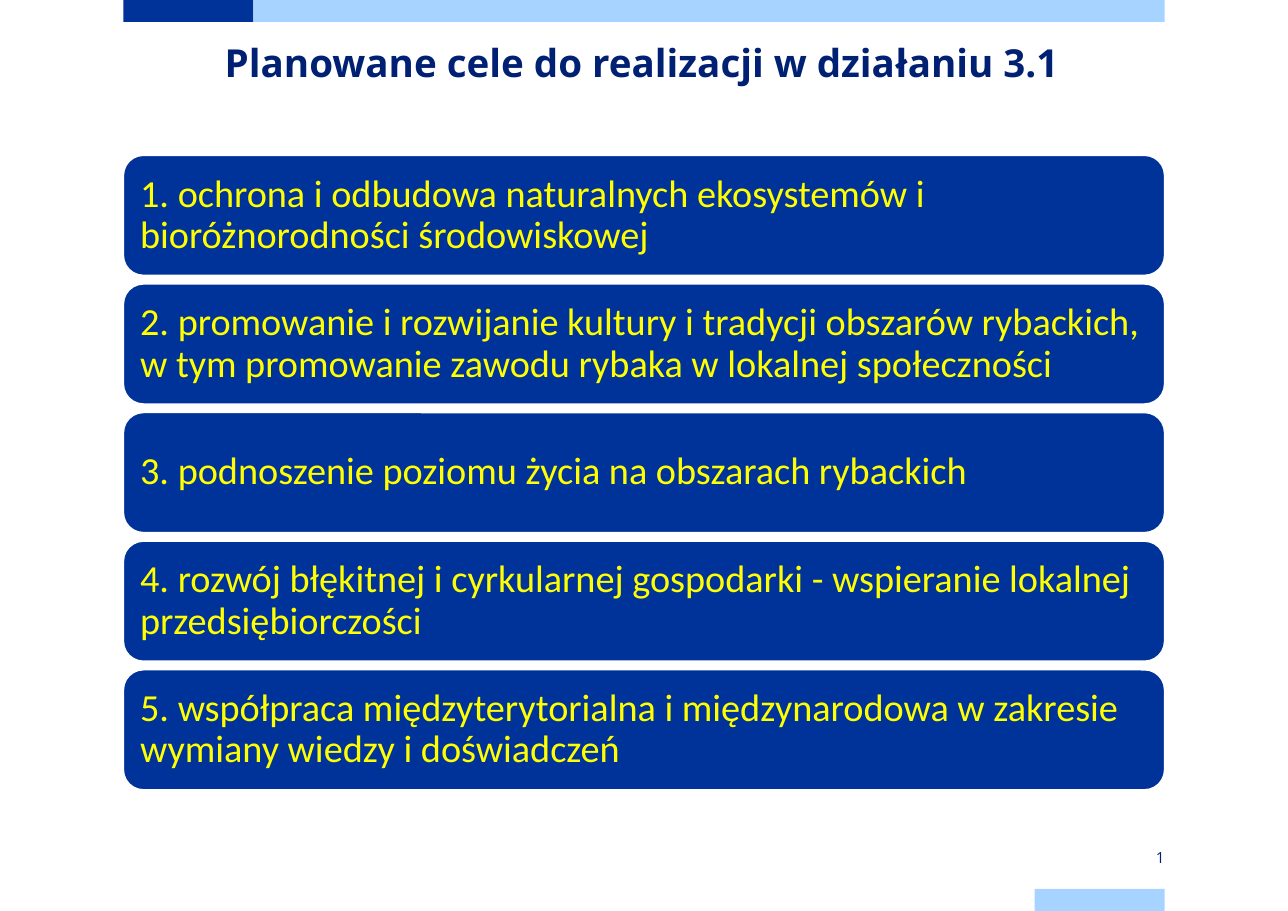
from pptx import Presentation
from pptx.dml.color import RGBColor
from pptx.enum.shapes import MSO_SHAPE as Shape
from pptx.enum.text import MSO_ANCHOR as Anchor, PP_ALIGN as Align
from pptx.util import Inches, Pt

NAVY, SKY, INK, YELLOW, WHITE = "003399", "A6D3FF", "002073", "FFFF00", "FFFFFF"


def color(value):
    return RGBColor.from_string(value)


def write(frame, text, *, size, font, ink, bold=False, align=Align.LEFT,
          anchor=Anchor.MIDDLE, spacing=1.0, insets=(0, 0, 0, 0)):
    frame.word_wrap = True
    frame.vertical_anchor = anchor
    (frame.margin_left, frame.margin_top,
     frame.margin_right, frame.margin_bottom) = map(Inches, insets)
    paragraph = frame.paragraphs[0]
    paragraph.alignment = align
    paragraph.line_spacing = spacing
    run = paragraph.add_run()
    run.text = text
    run.font.size = Pt(size)
    run.font.name = font
    run.font.bold = bold
    run.font.color.rgb = color(ink)


class GoalsSlide:
    heading_font = "Open Sans"
    body_font = "Calibri"

    def __init__(self, deck):
        self.slide = deck.slides.add_slide(deck.slide_layouts[6])

    def block(self, kind, box, fill, line=None):
        shape = self.slide.shapes.add_shape(kind, *map(Inches, box))
        shape.shadow.inherit = False
        shape.fill.solid()
        shape.fill.fore_color.rgb = color(fill)
        if line:
            shape.line.color.rgb = color(line)
            shape.line.width = Pt(1)
        else:
            shape.line.fill.background()
        return shape

    def bar(self, box, fill):
        self.block(Shape.RECTANGLE, box, fill)

    def goal(self, box, text):
        card = self.block(Shape.ROUNDED_RECTANGLE, box, NAVY, WHITE)
        write(card.text_frame, text, size=25, font=self.body_font, ink=YELLOW,
              spacing=0.9, insets=(0.1, 0.1, 0.1, 0.1))

    def label(self, box, text, **style):
        holder = self.slide.shapes.add_textbox(*map(Inches, box))
        write(holder.text_frame, text, font=self.heading_font, ink=INK, **style)


GOALS = [
    "ochrona i odbudowa naturalnych ekosystemów i bioróżnorodności środowiskowej",
    "promowanie i rozwijanie kultury i tradycji obszarów rybackich, "
    "w tym promowanie zawodu rybaka w lokalnej społeczności",
    "podnoszenie poziomu życia na obszarach rybackich",
    "rozwój błękitnej i cyrkularnej gospodarki - wspieranie lokalnej przedsiębiorczości",
    "współpraca międzyterytorialna i międzynarodowa w zakresie wymiany wiedzy i doświadczeń",
]
LEFT, WIDTH = 1.12, 9.45
GOAL_TOP, GOAL_HEIGHT, GOAL_STEP = 1.41, 1.09, 1.1675
BAR_HEIGHT, SHORT_BAR = 0.2, 1.18
RIGHT_BAR = LEFT + WIDTH - SHORT_BAR


def main():
    deck = Presentation()
    deck.slide_width, deck.slide_height = Inches(11.69), Inches(8.27)
    page = GoalsSlide(deck)

    # Colour bars at the top and bottom edges
    page.bar((LEFT, 0, SHORT_BAR, BAR_HEIGHT), NAVY)
    page.bar((LEFT + SHORT_BAR, 0, WIDTH - SHORT_BAR, BAR_HEIGHT), SKY)
    page.bar((RIGHT_BAR, 8.07, SHORT_BAR, BAR_HEIGHT), SKY)

    # Title
    page.label((1.15, 0.27, WIDTH, 0.79), "Planowane cele do realizacji w działaniu 3.1",
               size=25.2, bold=True, align=Align.CENTER, anchor=Anchor.TOP,
               spacing=Pt(36), insets=(0, 0, 0.1, 0))

    # Numbered goals
    for index, goal in enumerate(GOALS):
        top = GOAL_TOP + index * GOAL_STEP
        page.goal((LEFT, top, WIDTH, GOAL_HEIGHT), f"{index + 1}. {goal}")

    # Page number
    page.label((RIGHT_BAR, 7.68, SHORT_BAR, 0.2), "1", size=10, align=Align.RIGHT)

    deck.save("out.pptx")


if __name__ == "__main__":
    main()
